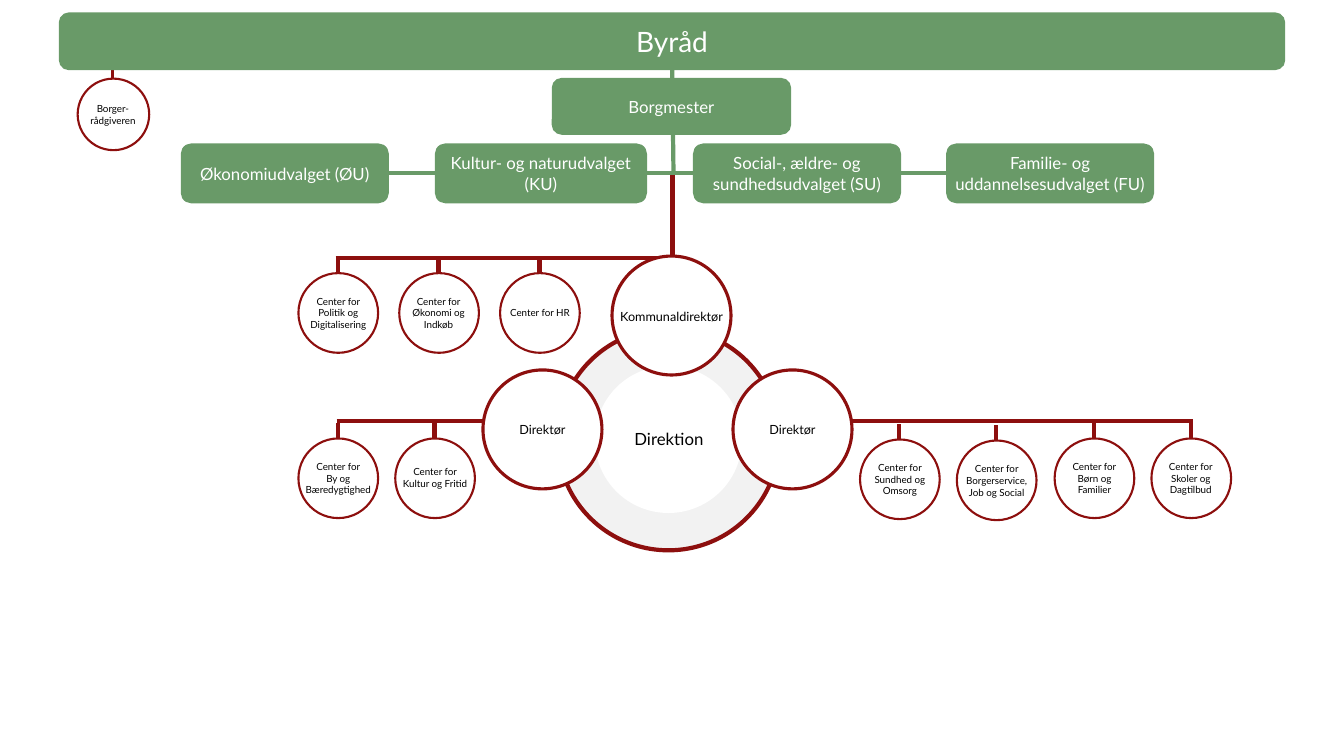
"""Build the organisation chart of the municipal council and its centres."""
import pptx
import pptx.dml.color
import pptx.enum.shapes
import pptx.enum.text
import pptx.oxml.ns
import pptx.util
from lxml import etree

PX = 9144
COLORS = {"green": "699A68", "red": "8D0F0E", "white": "FFFFFF", "grey": "F2F2F2", "black": "000000"}
SHAPES = pptx.enum.shapes.MSO_SHAPE
MIDDLE = pptx.enum.text.MSO_ANCHOR.MIDDLE
CENTER = pptx.enum.text.PP_ALIGN.CENTER

presentation = pptx.Presentation()
presentation.slide_width, presentation.slide_height = 1333 * PX, 750 * PX
slide = presentation.slides.add_slide(presentation.slide_layouts[6])


def add_line(start_x, start_y, end_x, end_y, color="red", width=3):
    line = slide.shapes.add_connector(
        pptx.enum.shapes.MSO_CONNECTOR.STRAIGHT, start_x * PX, start_y * PX, end_x * PX, end_y * PX)
    line.line.color.rgb = pptx.dml.color.RGBColor.from_string(COLORS[color])
    line.line.width = pptx.util.Pt(width)
    etree.SubElement(line._element.spPr, pptx.oxml.ns.qn("a:effectLst"))


def add_item(kind, left, top, width, height, fill=None, outline=None, weight=1,
             text="", size=7, color="black", inset=(0, 0)):
    box = (left * PX, top * PX, width * PX, height * PX)
    if kind is None:
        shape = slide.shapes.add_textbox(*box)
    else:
        shape = slide.shapes.add_shape(kind, *box)
        shape.shadow.inherit = False
        shape.fill.solid()
        shape.fill.fore_color.rgb = pptx.dml.color.RGBColor.from_string(COLORS[fill])
        if outline:
            shape.line.color.rgb = pptx.dml.color.RGBColor.from_string(COLORS[outline])
            shape.line.width = pptx.util.Pt(weight)
        else:
            shape.line.fill.background()
    if not text:
        return
    frame = shape.text_frame
    frame.word_wrap = True
    frame.vertical_anchor = MIDDLE
    frame.margin_left = frame.margin_right = inset[0] * PX
    frame.margin_top = frame.margin_bottom = inset[1] * PX
    frame.text = text
    for paragraph in frame.paragraphs:
        paragraph.alignment = CENTER
        paragraph.font.name = "Lato"
        paragraph.font.size = pptx.util.Pt(size)
        paragraph.font.color.rgb = pptx.dml.color.RGBColor.from_string(COLORS[color])


add_line(667, 172, 667, 255)
add_item(SHAPES.OVAL, 553, 326, 220, 220, "grey", "red", 3)
add_item(SHAPES.OVAL, 590, 363, 146, 146, "white")
add_item(None, 592, 424, 143, 23, text="Direktion", size=12)

add_line(112, 60, 112, 149, width=2.25)
add_line(939, 172, 385, 172, "green")
add_line(666, 13, 668, 172, "green")

boxes = [
    (59, 13, 1215, 56, "Byråd", 20, (10, 5)),
    (548, 78, 236, 55, "Borgmester", 12, (10, 5)),
    (180, 143, 205, 58, "Økonomiudvalget (ØU)", 12, (10, 5)),
    (432, 143, 209, 58, "Kultur- og naturudvalget (KU)", 12, (10, 5)),
    (688, 143, 205, 58, "Social-, ældre- og sundhedsudvalget (SU)", 12, (10, 5)),
    (939, 143, 205, 58, "Familie- og uddannelsesudvalget (FU)", 12, (4, 4)),
]
for left, top, width, height, text, size, inset in boxes:
    add_item(SHAPES.ROUNDED_RECTANGLE, left, top, width, height, "green", "green", 1,
             text, size, "white", inset)

for start_x, end_x, rail_y in [(333, 656, 256), (334, 488, 418), (1183, 750, 418)]:
    add_line(start_x, rail_y, end_x, rail_y)

centers = [
    (335, 271, 69, 35, "Center for Politik og Digitalisering"),
    (435, 271, 64, 35, "Center for Økonomi og Indkøb"),
    (535, 271, 65, 12, "Center for HR"),
    (335, 435, 67, 35, "Center for\nBy og Bæredygtighed"),
    (431, 435, 67, 24, "Center for Kultur og Fritid"),
    (892, 436, 65, 35, "Center for Sundhed og Omsorg"),
    (988, 437, 67, 35, "Center for Borgerservice, Job og Social"),
    (1085, 435, 67, 35, "Center for\nBørn og Familier"),
    (1181, 435, 64, 35, "Center for Skoler og\nDagtilbud"),
]
for center_x, top, text_width, text_height, text in centers:
    add_line(center_x, top - 15, center_x, top + 5)
    add_item(SHAPES.OVAL, center_x - 39, top, 79, 79, "white", "red", 1.5)
    add_item(None, center_x - text_width // 2, top + (79 - text_height) // 2,
             text_width, text_height, text=text)

for left, top, text in [(479, 367, "Direktør"), (727, 367, "Direktør"), (607, 254, "Kommunaldirektør")]:
    add_item(SHAPES.OVAL, left, top, 118, 118, "white", "red", 2.25)
    add_item(None, left + 5, top + 52, 108, 15, text=text, size=9)

add_item(SHAPES.OVAL, 77, 78, 71, 71, "white", "red", 1.5)
add_item(None, 80, 103, 64, 21, text="Borger-rådgiveren")

presentation.save("out.pptx")
